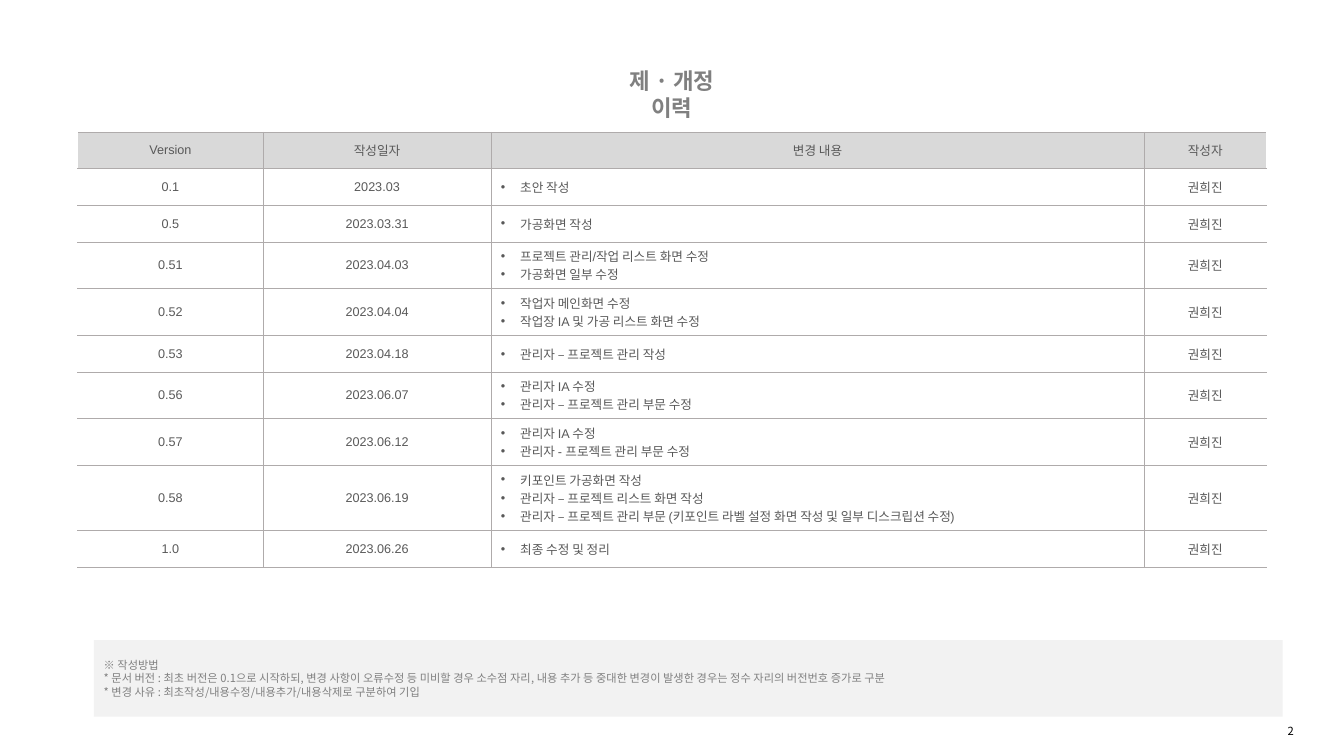
from pptx import Presentation, util as u
from pptx.dml.color import RGBColor
from pptx.enum import shapes, text
from pptx.oxml import parse_xml
from pptx.oxml.ns import nsdecls

WIDE, HIGH = u.Inches(13.33), u.Inches(7.5)
HUES = {"head": "D9D9D9", "cell": "FFFFFF", "rule": "AFABAB", "ink": "595959",
        "soft": "808080", "note": "F2F2F2", "page": "000000"}
KOREAN = "Noto Sans CJK KR"
MID, LEFT, RIGHT = text.PP_ALIGN.CENTER, text.PP_ALIGN.LEFT, text.PP_ALIGN.RIGHT
COLS = [13.8, 16.95, 48.6, 9.1]
ROW = 4.85
AUTHOR = "권희진"
HEADS = ["Version", "작성일자", "변경 내용", "작성자"]
LOG = [
    ("0.1", "2023.03", ["초안 작성"]),
    ("0.5", "2023.03.31", ["가공화면 작성"]),
    ("0.51", "2023.04.03", ["프로젝트 관리/작업 리스트 화면 수정", "가공화면 일부 수정"]),
    ("0.52", "2023.04.04", ["작업자 메인화면 수정", "작업장 IA 및 가공 리스트 화면 수정"]),
    ("0.53", "2023.04.18", ["관리자 – 프로젝트 관리 작성"]),
    ("0.56", "2023.06.07", ["관리자 IA 수정", "관리자 – 프로젝트 관리 부문 수정"]),
    ("0.57", "2023.06.12", ["관리자 IA 수정", "관리자 - 프로젝트 관리 부문 수정"]),
    ("0.58", "2023.06.19", [
        "키포인트 가공화면 작성",
        "관리자 – 프로젝트 리스트 화면 작성",
        "관리자 – 프로젝트 관리 부문 (키포인트 라벨 설정 화면 작성 및 일부 디스크립션 수정)"]),
    ("1.0", "2023.06.26", ["최종 수정 및 정리"]),
]
NOTES = [
    "※ 작성방법",
    "* 문서 버전 : 최초 버전은 0.1으로 시작하되, 변경 사항이 오류수정 등 미비할 경우 소수점 자리, "
    "내용 추가 등 중대한 변경이 발생한 경우는 정수 자리의 버전번호 증가로 구분",
    "* 변경 사유 : 최초작성/내용수정/내용추가/내용삭제로 구분하여 기입",
]


def across(share):
    return int(WIDE * share / 100)


def down(share):
    return int(HIGH * share / 100)


def area(left, top, width, height):
    return across(left), down(top), across(width), down(height)


def paint(thing, hue):
    thing.fill.solid()
    thing.fill.fore_color.rgb = RGBColor.from_string(HUES[hue])


def dot(para):
    props = para._p.get_or_add_pPr()
    props.set("marL", str(u.Inches(0.19)))
    props.set("indent", str(-u.Inches(0.19)))
    props.append(parse_xml(f'<a:buFont {nsdecls("a")} typeface="Arial"/>'))
    props.append(parse_xml(f'<a:buChar {nsdecls("a")} char="•"/>'))


def write(frame, lines, size, hue, align, face=KOREAN, bold=False, dots=False, pitch=None):
    for i, line in enumerate(lines):
        para = frame.paragraphs[0] if i == 0 else frame.add_paragraph()
        para.text = line
        para.alignment = align
        if pitch:
            para.line_spacing = u.Pt(pitch)
        if dots:
            dot(para)
        font = para.font
        font.size, font.name, font.bold = u.Pt(size), face, bold
        font.color.rgb = RGBColor.from_string(HUES[hue])
        font._element.append(parse_xml(f'<a:ea {nsdecls("a")} typeface="{KOREAN}"/>'))


def edge(cell, first, last):
    sides = {"lnL": first, "lnR": last, "lnT": False, "lnB": False}
    props = cell._tc.get_or_add_tcPr()
    for i, (side, outer) in enumerate(sides.items()):
        hue, width = ("cell", 1) if outer else ("rule", 0.5)
        props.insert(i, parse_xml(
            f'<a:{side} {nsdecls("a")} w="{u.Pt(width)}"><a:solidFill>'
            f'<a:srgbClr val="{HUES[hue]}"/></a:solidFill></a:{side}>'))


def grid(slide):
    rows = [[[head] for head in HEADS]]
    rows += [[[ver], [day], items, [AUTHOR]] for ver, day, items in LOG]
    table = slide.shapes.add_table(
        len(rows), len(COLS), *area(5.78, 17.47, sum(COLS), ROW * len(rows))).table
    for col, share in zip(table.columns, COLS):
        col.width = across(share)
    for r, row in enumerate(rows):
        table.rows[r].height = down(ROW)
        for c, lines in enumerate(row):
            cell = table.cell(r, c)
            cell.vertical_anchor = text.MSO_ANCHOR.MIDDLE
            paint(cell, "cell" if r else "head")
            edge(cell, c == 0, c == len(COLS) - 1)
            list_cell = r > 0 and c == 2
            write(cell.text_frame, lines, 9, "ink", LEFT if list_cell else MID,
                  face="Arial", dots=list_cell)


def title(slide):
    head = slide.shapes.title
    head.left, head.top, head.width, head.height = area(43.96, 8.27, 12.08, 4.93)
    frame = head.text_frame
    frame.word_wrap = True
    frame.auto_size = text.MSO_AUTO_SIZE.NONE
    frame.vertical_anchor = text.MSO_ANCHOR.TOP
    frame.margin_left = frame.margin_right = u.Inches(0.25)
    write(frame, ["제 · 개정 이력"], 16, "soft", MID, bold=True, pitch=19.2)


def note(slide):
    box = slide.shapes.add_shape(shapes.MSO_SHAPE.RECTANGLE, *area(6.98, 84.67, 88.45, 10.13))
    box.shadow.inherit = False
    paint(box, "note")
    box.line.fill.background()
    box.text_frame.word_wrap = True
    box.text_frame.vertical_anchor = text.MSO_ANCHOR.MIDDLE
    write(box.text_frame, NOTES, 8, "soft", LEFT, pitch=9.6)


def page(slide):
    frame = slide.shapes.add_textbox(*area(74.49, 95.33, 22.51, 2.67)).text_frame
    frame.word_wrap = True
    frame.vertical_anchor = text.MSO_ANCHOR.MIDDLE
    write(frame, ["2"], 8, "page", RIGHT)


def main():
    deck = Presentation()
    deck.slide_width, deck.slide_height = WIDE, HIGH
    slide = deck.slides.add_slide(deck.slide_layouts[5])
    grid(slide)
    title(slide)
    note(slide)
    page(slide)
    deck.save("out.pptx")


if __name__ == "__main__":
    main()
